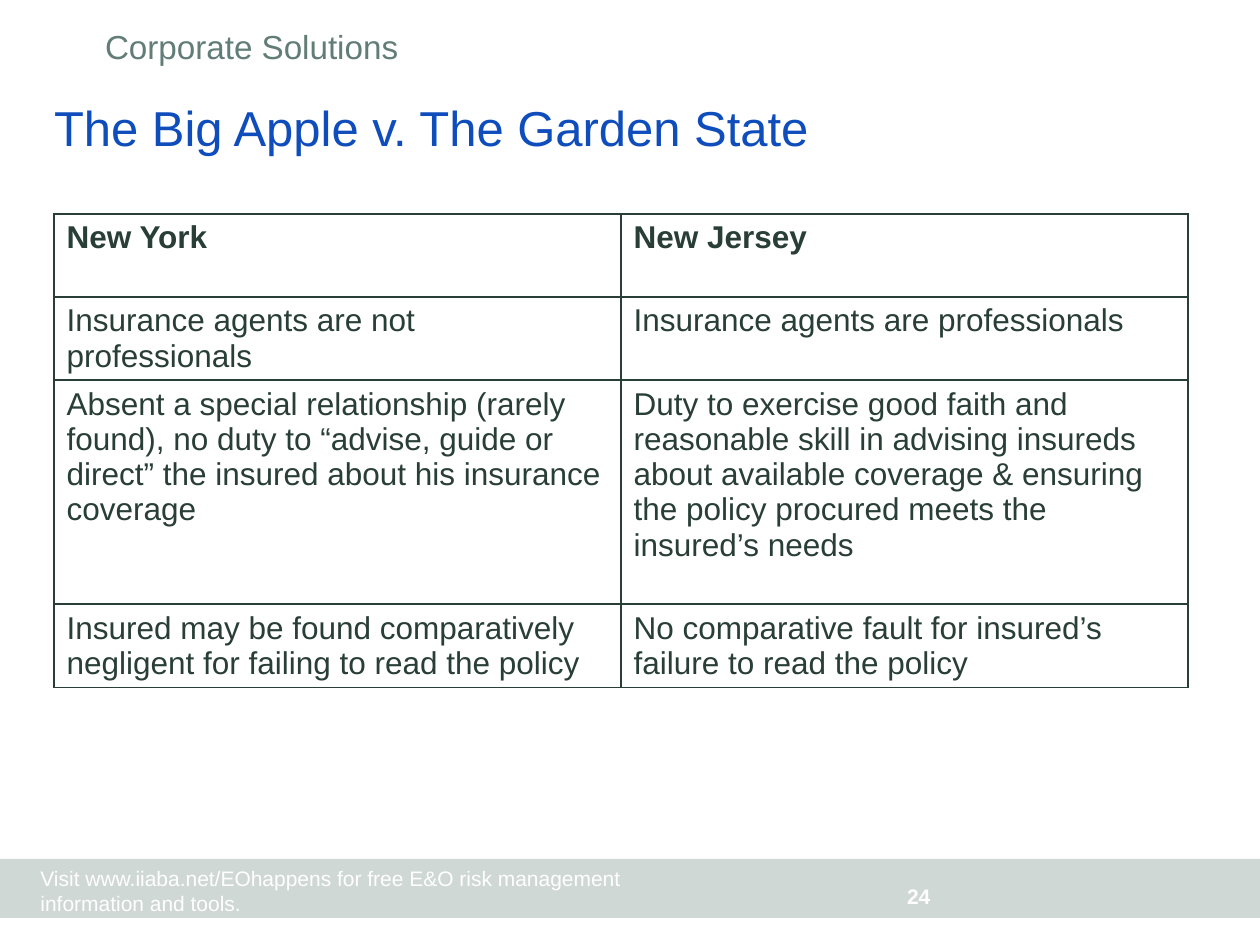
from lxml.etree import SubElement
from pptx import Presentation
from pptx.dml.color import RGBColor
from pptx.enum.shapes import MSO_SHAPE
from pptx.enum.text import MSO_ANCHOR, MSO_AUTO_SIZE, PP_ALIGN
from pptx.oxml.ns import qn
from pptx.util import Pt

PX = 914400 // 126
COLORS = {"band": "D0D8D6", "brand": "627D77", "title": "0F4DBC",
          "ink": "283E36", "white": "FFFFFF"}

TITLE = "The Big Apple v. The Garden State"
HEADER = "Corporate Solutions"
FOOTER = "Visit www.iiaba.net/EOhappens for free E&O risk management information and tools."
PAGE = "24"
ROWS = [
    ("New York", "New Jersey"),
    ("Insurance agents are not professionals", "Insurance agents are professionals"),
    ("Absent a special relationship (rarely found), no duty to “advise, guide or direct” "
     "the insured about his insurance coverage",
     "Duty to exercise good faith and reasonable skill in advising insureds about "
     "available coverage & ensuring the policy procured meets the insured’s needs"),
    ("Insured may be found comparatively negligent for failing to read the policy",
     "No comparative fault for insured’s failure to read the policy"),
]
ROW_HEIGHTS = [83, 83, 224, 83]
COL_WIDTH = 567


def px(*values):
    return [v * PX for v in values]


def rgb(name):
    return RGBColor.from_string(COLORS[name])


def write(tf, text, size, color, bold=False, spacing=None):
    p = tf.paragraphs[0]
    p.alignment = PP_ALIGN.LEFT
    if spacing:
        p.line_spacing = spacing
    r = p.add_run()
    r.text = text
    r.font.name = "Arial"
    r.font.size = Pt(size)
    r.font.bold = bold
    r.font.color.rgb = rgb(color)


def set_frame(tf, inset=True, anchor=MSO_ANCHOR.TOP):
    tf.word_wrap = True
    tf.auto_size = MSO_AUTO_SIZE.NONE
    tf.vertical_anchor = anchor
    if not inset:
        tf.margin_left = tf.margin_right = tf.margin_top = tf.margin_bottom = 0
    return tf


def set_borders(cell, color, width):
    tc_pr = cell._tc.get_or_add_tcPr()
    for i, side in enumerate(("lnL", "lnR", "lnT", "lnB")):
        ln = SubElement(tc_pr, qn(f"a:{side}"), w=str(Pt(width)))
        fill = SubElement(ln, qn("a:solidFill"))
        SubElement(fill, qn("a:srgbClr"), val=COLORS[color])
        tc_pr.remove(ln)
        tc_pr.insert(i, ln)


prs = Presentation()
prs.slide_width, prs.slide_height = px(1260, 945)
slide = prs.slides.add_slide(prs.slide_layouts[5])
shapes = slide.shapes

band = shapes.add_shape(MSO_SHAPE.RECTANGLE, *px(0, 859, 1260, 59))
band.shadow.inherit = False
band.fill.solid()
band.fill.fore_color.rgb = rgb("band")
band.line.fill.background()

title = shapes.title
title.left, title.top, title.width, title.height = px(54, 37, 804, 120)
write(set_frame(title.text_frame, False, MSO_ANCHOR.BOTTOM), TITLE, 28, "title", spacing=0.9)

header = shapes.add_textbox(*px(105, 26, 725, 38))
write(set_frame(header.text_frame, False), HEADER, 19, "brand")

footer = shapes.add_textbox(*px(28, 859, 625, 63))
write(set_frame(footer.text_frame), FOOTER, 12, "white")

page = shapes.add_textbox(*px(907, 859, 294, 50))
write(set_frame(page.text_frame, False, MSO_ANCHOR.BOTTOM), PAGE, 12, "white", bold=True)

table = shapes.add_table(len(ROWS), 2, *px(54, 214, 2 * COL_WIDTH, sum(ROW_HEIGHTS))).table
table.first_row = table.horz_banding = False
for col in table.columns:
    col.width = COL_WIDTH * PX
for i, (texts, height) in enumerate(zip(ROWS, ROW_HEIGHTS)):
    table.rows[i].height = height * PX
    for j, text in enumerate(texts):
        cell = table.cell(i, j)
        cell.fill.background()
        set_borders(cell, "ink", 1)
        write(cell.text_frame, text, 18, "ink", bold=i == 0)

prs.save("out.pptx")
